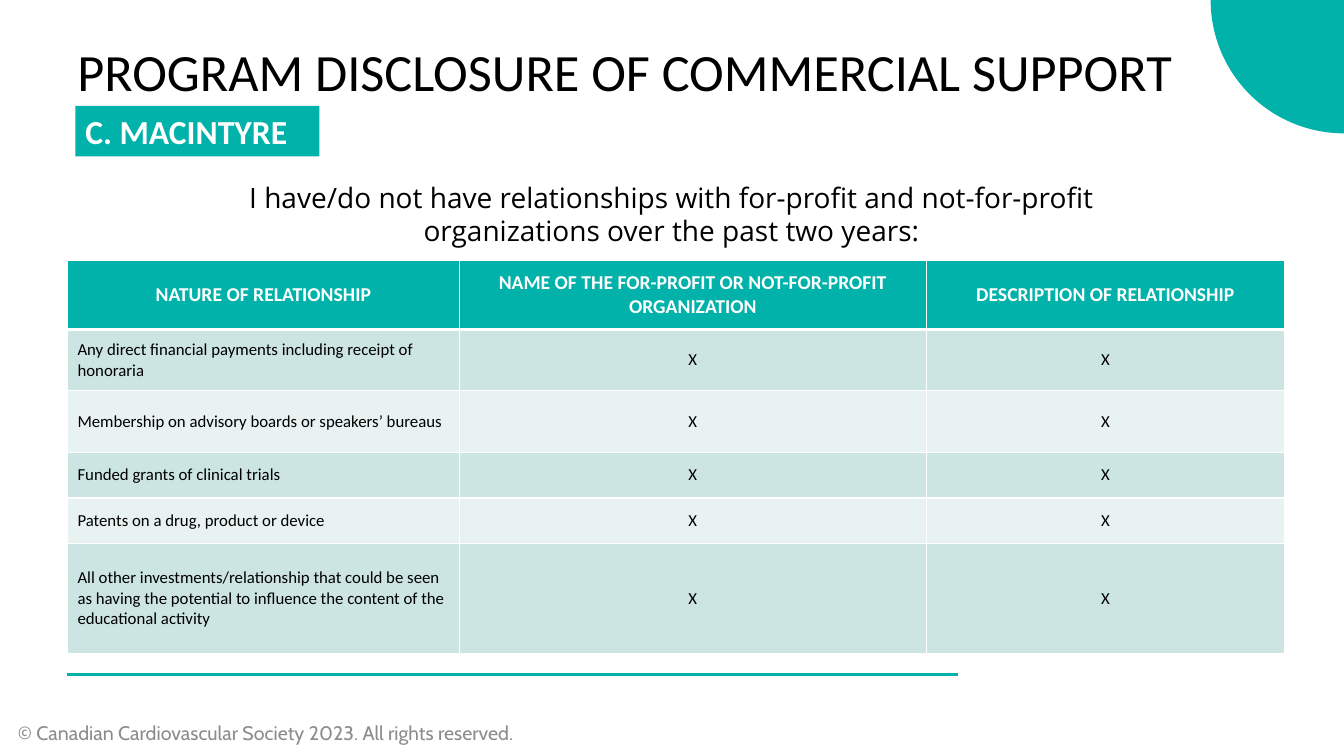
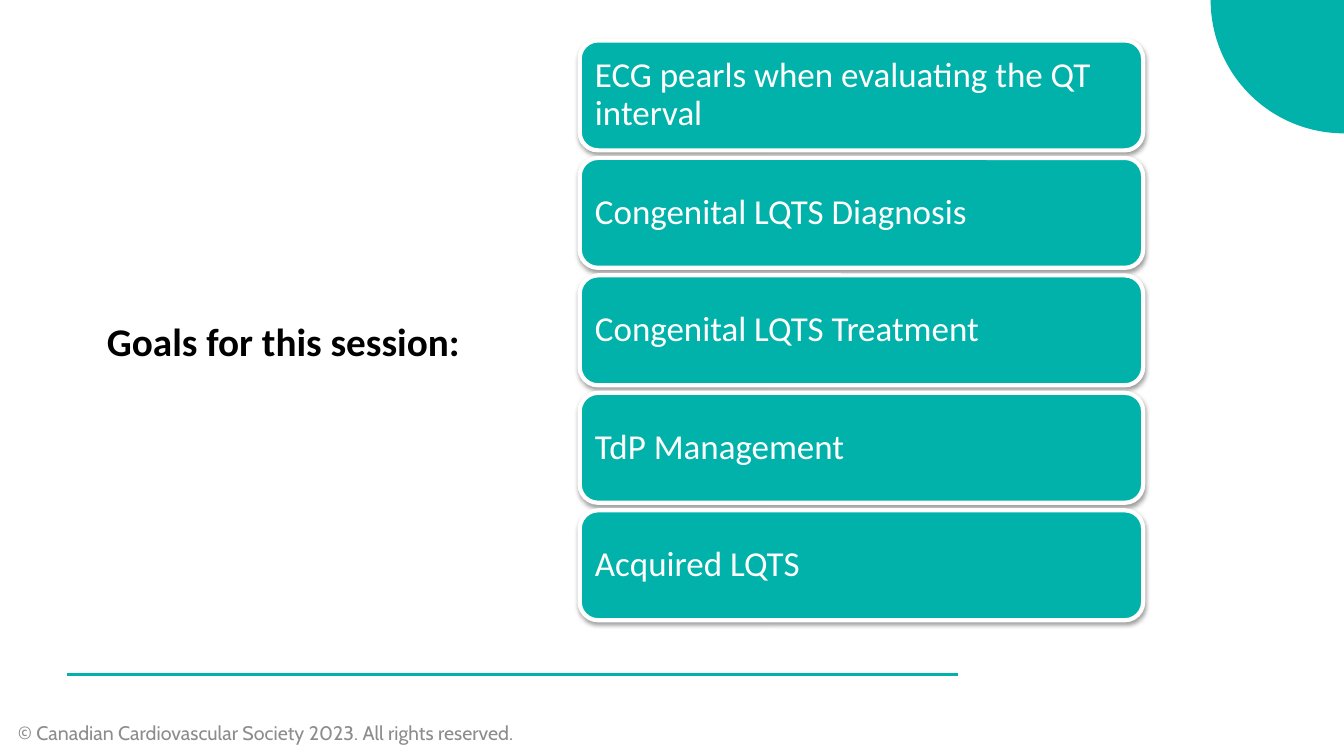
from lxml import etree
from pptx import Presentation
from pptx.dml.color import RGBColor
from pptx.enum.shapes import MSO_CONNECTOR, MSO_SHAPE
from pptx.enum.text import MSO_ANCHOR, PP_ALIGN
from pptx.oxml.ns import qn
from pptx.util import Cm, Pt

STRAIGHT = MSO_CONNECTOR.STRAIGHT
RECT, ROUNDED, WEDGE = MSO_SHAPE.RECTANGLE, MSO_SHAPE.ROUNDED_RECTANGLE, MSO_SHAPE.PIE_WEDGE
TOP, MIDDLE, BOTTOM = MSO_ANCHOR.TOP, MSO_ANCHOR.MIDDLE, MSO_ANCHOR.BOTTOM
LEFT, CENTER = PP_ALIGN.LEFT, PP_ALIGN.CENTER

SLIDE_W, SLIDE_H = 33.87, 19.05
COLORS = {
    "teal": "00B2A9",
    "white": "FFFFFF",
    "black": "000000",
    "gray": "8C8C8C",
    "band_dark": "CCE4E2",
    "band_light": "E7F2F1",
}
BODY_FONT = "Calibri"
FOOTER = "© Canadian Cardiovascular Society 2023. All rights reserved."

DISCLOSURE_HEADERS = [
    "NATURE OF RELATIONSHIP",
    "NAME OF THE FOR-PROFIT OR NOT-FOR-PROFIT ORGANIZATION",
    "DESCRIPTION OF RELATIONSHIP",
]
RELATIONSHIPS = [
    "Any direct financial payments including receipt of honoraria",
    "Membership on advisory boards or speakers’ bureaus",
    "Funded grants of clinical trials",
    "Patents on a drug, product or device",
    "All other investments/relationship that could be seen as having the "
    "potential to influence the content of the educational activity",
]
COL_WIDTHS = [9.88, 11.76, 9.04]
ROW_HEIGHTS = [1.75, 1.55, 1.55, 1.15, 1.15, 2.77]
GOALS = [
    "ECG pearls when evaluating the QT interval",
    "Congenital LQTS Diagnosis",
    "Congenital LQTS Treatment",
    "TdP Management",
    "Acquired LQTS",
]


def rgb(name):
    return RGBColor.from_string(COLORS[name])


def write(tf, text, size, color="black", font=BODY_FONT, bold=False, align=LEFT):
    p = tf.paragraphs[0]
    p.text = text
    p.alignment = align
    p.font.size = Pt(size)
    p.font.name = font
    p.font.bold = bold
    p.font.color.rgb = rgb(color)
    return p


def add_text(slide, box, text, size, anchor=TOP, **style):
    tf = slide.shapes.add_textbox(*map(Cm, box)).text_frame
    tf.word_wrap = True
    tf.vertical_anchor = anchor
    write(tf, text, size, **style)


def add_block(slide, kind, box):
    sp = slide.shapes.add_shape(kind, *map(Cm, box))
    sp.shadow.inherit = False
    sp.fill.solid()
    sp.fill.fore_color.rgb = rgb("teal")
    sp.line.fill.background()
    return sp


# Shared frame: corner, rule and footer
def add_slide(prs):
    slide = prs.slides.add_slide(prs.slide_layouts[6])
    radius = 3.36
    add_block(slide, WEDGE, (SLIDE_W - radius, 0, radius, radius)).rotation = 270
    rule = slide.shapes.add_connector(STRAIGHT, Cm(24.13), Cm(17), Cm(1.7), Cm(17))
    rule.line.color.rgb = rgb("teal")
    rule.line.width = Pt(2)
    etree.SubElement(rule._element.spPr, qn("a:effectLst"))
    add_text(slide, (0.2, 18.03, 15.27, 1.02), FOOTER, 14, color="gray", font="Cabin")
    return slide


# Table
def set_borders(cell, **widths):
    tc_pr = cell._tc.get_or_add_tcPr()
    for side in "LRTB":
        ln = etree.SubElement(tc_pr, qn(f"a:ln{side}"), w=str(Pt(widths.get(side, 1))))
        fill = etree.SubElement(ln, qn("a:solidFill"))
        etree.SubElement(fill, qn("a:srgbClr"), val=COLORS["white"])


def style_cell(cell, fill, text, size, borders, **style):
    set_borders(cell, **borders)
    cell.fill.solid()
    cell.fill.fore_color.rgb = rgb(fill)
    cell.vertical_anchor = MIDDLE
    write(cell.text_frame, text, size, **style)


def add_disclosure_table(slide, left, top):
    rows = [DISCLOSURE_HEADERS] + [[name, "X", "X"] for name in RELATIONSHIPS]
    size = (sum(COL_WIDTHS), sum(ROW_HEIGHTS))
    table = slide.shapes.add_table(
        len(rows), len(COL_WIDTHS), *map(Cm, (left, top, *size))).table
    for column, width in zip(table.columns, COL_WIDTHS):
        column.width = Cm(width)
    for r, (row, height) in enumerate(zip(rows, ROW_HEIGHTS)):
        table.rows[r].height = Cm(height)
        for c, text in enumerate(row):
            cell = table.cell(r, c)
            if r == 0:
                style_cell(cell, "teal", text, 14, {"B": 3},
                           color="white", bold=True, align=CENTER)
            else:
                style_cell(cell, "band_dark" if r % 2 else "band_light", text, 12,
                           {"T": 3} if r == 1 else {}, align=CENTER if c else LEFT)


# Goal cards
def add_shadow(sp):
    effects = sp._element.spPr.find(qn("a:effectLst"))
    shadow = etree.SubElement(effects, qn("a:outerShdw"), blurRad=str(Pt(3.1)),
                              dist=str(Pt(1.6)), dir="5400000", rotWithShape="0")
    color = etree.SubElement(shadow, qn("a:srgbClr"), val=COLORS["black"])
    etree.SubElement(color, qn("a:alpha"), val="38000")


def add_goal_card(slide, box, text):
    sp = add_block(slide, ROUNDED, box)
    sp.line.color.rgb = rgb("white")
    sp.line.width = Pt(3)
    add_shadow(sp)
    tf = sp.text_frame
    tf.word_wrap = True
    tf.vertical_anchor = MIDDLE
    tf.margin_left = tf.margin_right = tf.margin_top = tf.margin_bottom = Cm(0.25)
    write(tf, text, 25, color="white").line_spacing = 0.9


# Slides
def build_disclosure(prs):
    slide = add_slide(prs)
    add_text(slide, (4.72, 4.42, 24.41, 1.96),
             "I have/do not have relationships with for-profit and "
             "not-for-profit organizations over the past two years:",
             20, font="Open Sans", align=CENTER)
    add_disclosure_table(slide, 1.7, 6.55)
    badge = add_block(slide, RECT, (1.9, 2.67, 6.15, 1.27))
    badge.text_frame.vertical_anchor = MIDDLE
    write(badge.text_frame, "C. MACINTYRE", 24, color="white", bold=True)
    add_text(slide, (1.7, 0.86, 28.78, 2.39),
             "PROGRAM DISCLOSURE OF COMMERCIAL SUPPORT", 37.4)


def build_goals(prs):
    slide = add_slide(prs)
    add_text(slide, (2.11, 6.15, 10.06, 3.15), "Goals for this session:", 28,
             anchor=BOTTOM, bold=True, align=CENTER)
    height, gap = 2.77, 0.19
    for i, goal in enumerate(GOALS):
        add_goal_card(slide, (14.61, 1.02 + i * (height + gap), 14.2, height), goal)


def main():
    prs = Presentation()
    prs.slide_width, prs.slide_height = Cm(SLIDE_W), Cm(SLIDE_H)
    build_disclosure(prs)
    build_goals(prs)
    prs.save("out.pptx")


if __name__ == "__main__":
    main()
